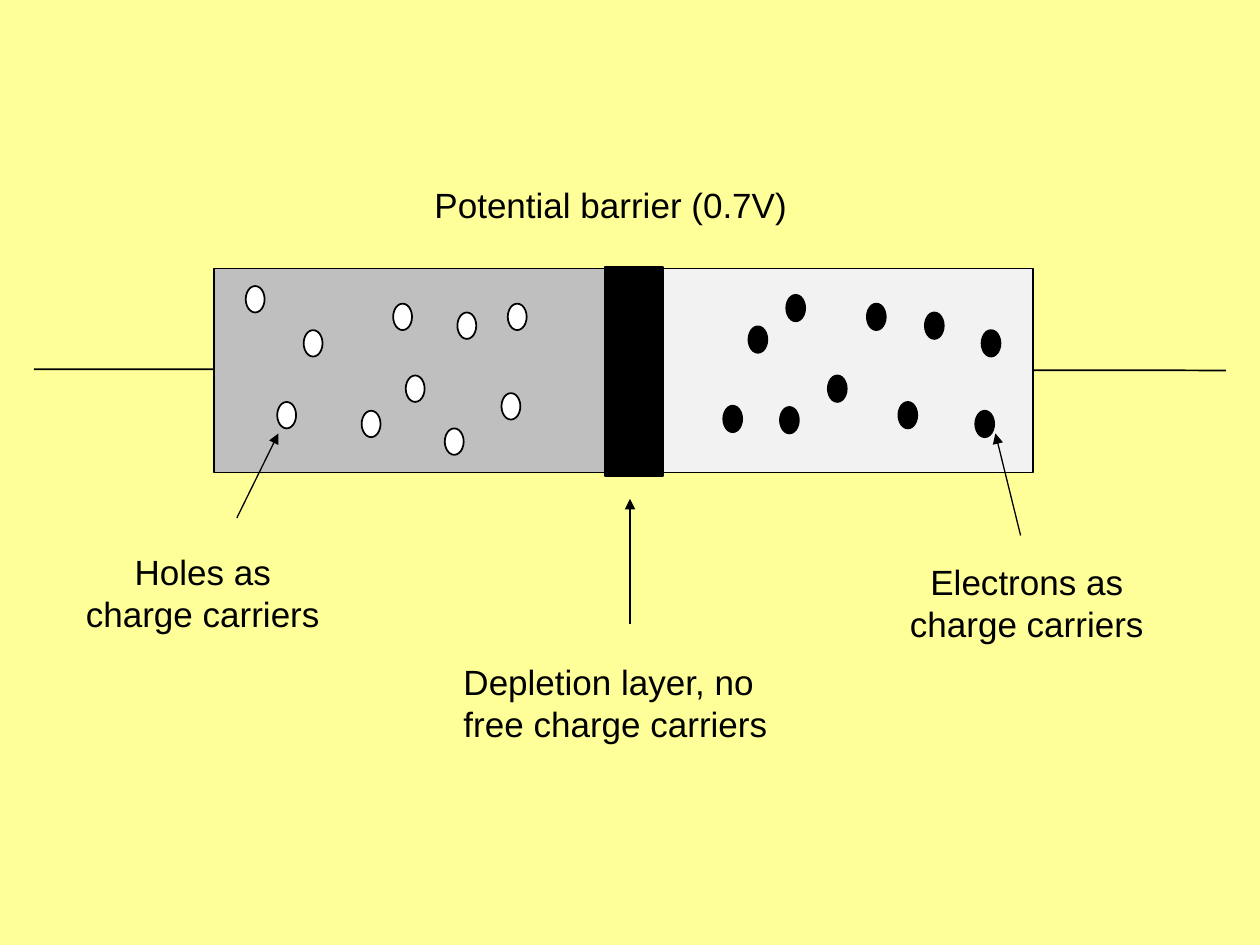
from typing import NamedTuple

from lxml import etree
from pptx import Presentation
from pptx.dml.color import RGBColor
from pptx.enum import shapes, text
from pptx.oxml import ns
from pptx.util import Pt

PX = 9144
BLACK, WHITE = "000000", "FFFFFF"
RECTANGLE = shapes.MSO_SHAPE.RECTANGLE
OVAL = shapes.MSO_SHAPE.OVAL
LEFT, CENTER = text.PP_ALIGN.LEFT, text.PP_ALIGN.CENTER
CARRIER_SIZE = (15, 21)


class Area(NamedTuple):
    left: int
    top: int
    width: int
    height: int


class Stroke(NamedTuple):
    start: tuple[int, int]
    end: tuple[int, int]


class Label(NamedTuple):
    words: str
    area: Area
    align: text.PP_ALIGN


WIRE = Stroke((27, 293), (973, 294))
P_REGION = Area(170, 213, 325, 162)
N_REGION = Area(495, 213, 325, 162)
DEPLETION_LAYER = Area(480, 212, 46, 166)

HOLES = [
    (241, 262), (287, 326), (353, 340), (312, 241), (220, 319),
    (322, 298), (195, 227), (403, 241), (398, 312), (363, 248),
]
ELECTRONS = [
    (619, 323), (734, 248), (657, 298), (774, 326), (688, 241),
    (779, 262), (713, 319), (574, 322), (624, 234), (594, 259),
]
ARROWS = [
    Stroke((500, 495), (500, 396)),
    Stroke((188, 411), (221, 344)),
    Stroke((810, 425), (790, 344)),
]
LABELS = [
    Label("Potential barrier (0.7V)", Area(335, 141, 323, 43), LEFT),
    Label("Holes as charge carriers", Area(51, 432, 220, 77), CENTER),
    Label("Electrons as charge carriers", Area(705, 440, 220, 77), CENTER),
    Label("Depletion layer, no free charge carriers", Area(358, 519, 268, 77), LEFT),
]


def color(value: str) -> RGBColor:
    return RGBColor.from_string(value)


def emu(lengths: tuple[int, ...]) -> list[int]:
    return [length * PX for length in lengths]


def draw_shape(page, kind: shapes.MSO_SHAPE, area: Area, fill: str) -> None:
    shape = page.shapes.add_shape(kind, *emu(area))
    shape.shadow.inherit = False
    shape.fill.solid()
    shape.fill.fore_color.rgb = color(fill)
    shape.line.color.rgb = color(BLACK)
    shape.line.width = Pt(1)


def draw_line(page, stroke: Stroke, width: float, arrow: bool = False) -> None:
    line = page.shapes.add_connector(
        shapes.MSO_CONNECTOR.STRAIGHT, *emu(stroke.start + stroke.end)
    )
    line.line.color.rgb = color(BLACK)
    line.line.width = Pt(width)
    if arrow:
        outline = line.line._get_or_add_ln()
        etree.SubElement(outline, ns.qn("a:tailEnd"), type="triangle")
    etree.SubElement(line._element.spPr, ns.qn("a:effectLst"))


def draw_carriers(page, places: list[tuple[int, int]], fill: str) -> None:
    for place in places:
        draw_shape(page, OVAL, Area(*place, *CARRIER_SIZE), fill)


def draw_label(page, label: Label) -> None:
    box = page.shapes.add_textbox(*emu(label.area))
    box.text_frame.word_wrap = True
    para = box.text_frame.paragraphs[0]
    para.alignment = label.align
    para.line_spacing = Pt(24)
    span = para.add_run()
    span.text = label.words
    span.font.name = "Arial"
    span.font.size = Pt(20)
    span.font.color.rgb = color(BLACK)


def main() -> None:
    deck = Presentation()
    deck.slide_width, deck.slide_height = emu((1000, 750))
    page = deck.slides.add_slide(deck.slide_layouts[6])
    page.background.fill.solid()
    page.background.fill.fore_color.rgb = color("FFFF99")

    draw_line(page, WIRE, 1)
    draw_shape(page, RECTANGLE, P_REGION, "BFBFBF")
    draw_shape(page, RECTANGLE, N_REGION, "F2F2F2")
    draw_carriers(page, HOLES, WHITE)
    draw_carriers(page, ELECTRONS, BLACK)
    draw_shape(page, RECTANGLE, DEPLETION_LAYER, BLACK)
    for arrow in ARROWS:
        draw_line(page, arrow, 0.75, arrow=True)
    for label in LABELS:
        draw_label(page, label)

    deck.save("out.pptx")


if __name__ == "__main__":
    main()
